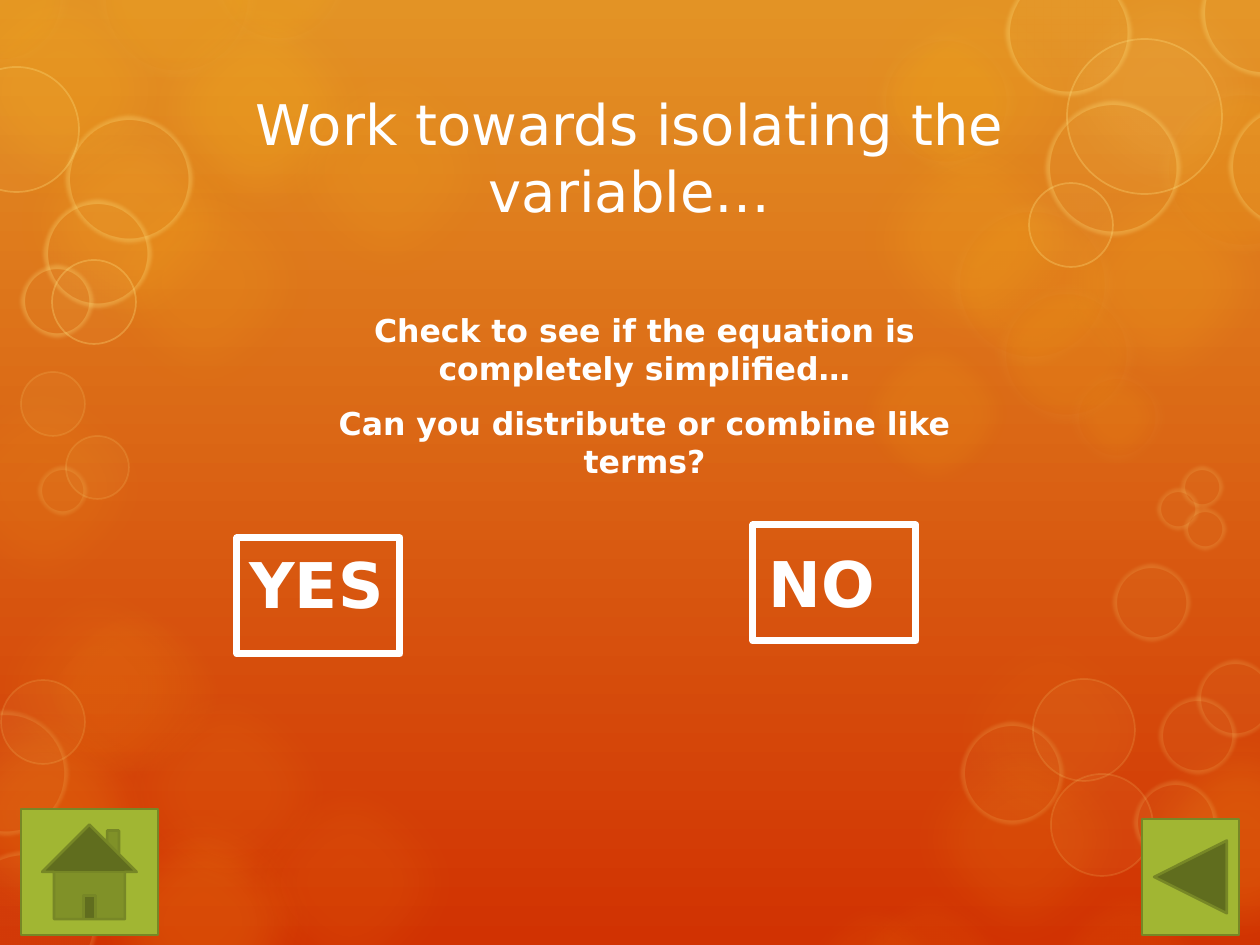
from lxml.etree import SubElement
from pptx import Presentation
from pptx.dml.color import RGBColor
from pptx.enum.shapes import MSO_SHAPE
from pptx.enum.text import MSO_ANCHOR, MSO_AUTO_SIZE, PP_ALIGN
from pptx.oxml.ns import qn
from pptx.util import Pt

PX = 7257  # EMU per px, 126 px to the inch
WIDTH, HEIGHT = 1260, 945
FONT = "DejaVu Sans"
COLORS = {
    "top": "E39325", "bottom": "D13202", "amber": "FDC61B", "pale": "FFE281",
    "cream": "FEEBAE", "white": "FFFFFF", "green": "A1B633", "olive": "778726",
}

# (left, top, fill opacity in percent), all of one diameter
BLOB_SIZE = 263
BLOBS = [
    (-32, 557, 8), (72, 151, 10), (258, 39, 10), (72, 790, 16), (-70, -41, 14),
    (127, -23, 20), (0, 91, 15), (842, -37, 10), (1033, 151, 15),
    (1109, 709, 16), (919, 601, 5), (-86, 682, 16), (97, 660, 8),
    (843, 108, 15), (890, 708, 10), (219, 752, 8), (-88, 356, 8),
]
# Circles are (left, top, diameter)
GLOWS = [
    (1157, 83, 173), (874, 29, 144), (948, 200, 168), (994, 282, 144),
    (1067, 367, 100), (94, -83, 165), (207, -94, 144), (-72, -73, 144),
]
FAINT_GLOWS = [(38, 596, 193), (795, 895, 159), (843, 883, 174), (1043, 883, 169)]
# (line width, line opacity, soft edge, circles)
RINGS = [
    (5, 15, 2.5, [
        (-45, 851, 142), (-56, 711, 124), (961, 722, 102), (1134, 781, 83),
        (1113, 564, 77), (1159, 697, 77), (1197, 660, 77), (1181, 466, 42),
        (1157, 488, 42), (1184, 508, 42), (38, 466, 49)]),
    (5, 30, 2.5, [
        (66, 116, 126), (44, 200, 107), (21, 265, 72), (1006, -30, 125),
        (1201, -50, 126), (1229, 104, 125), (1046, 101, 134)]),
    (1, 15, 0, [
        (1, 680, 84), (1051, 774, 102), (1033, 679, 102), (21, 372, 64),
        (66, 436, 63)]),
    (1, 30, 0, [(-46, 67, 125), (52, 260, 84), (1067, 39, 155), (1029, 183, 84)]),
]


def px(*lengths):
    return [round(n * PX) for n in lengths]


def rgb(name):
    return RGBColor.from_string(COLORS[name])


def style(sp, fill=None, line=None, width=0):
    sp.shadow.inherit = False
    if fill:
        sp.fill.solid()
        sp.fill.fore_color.rgb = rgb(fill)
    else:
        sp.fill.background()
    if line:
        sp.line.color.rgb = rgb(line)
        sp.line.width = Pt(width)
    else:
        sp.line.fill.background()


def bubble(shapes, box, fill, alpha, soft=0, line=None, width=0, line_alpha=0):
    x, y, d = box
    sp = shapes.add_shape(MSO_SHAPE.OVAL, *px(x, y, d, d))
    style(sp, fill, line, width)
    sp_pr = sp._element.spPr
    for color, percent in zip(list(sp_pr.iter(qn("a:srgbClr"))), (alpha, line_alpha)):
        SubElement(color, qn("a:alpha")).set("val", str(percent * 1000))
    if soft:
        effects = sp_pr.find(qn("a:effectLst"))
        SubElement(effects, qn("a:softEdge")).set("rad", str(Pt(soft)))
    return sp


def add_bubbles(shapes):
    bubbles = [bubble(shapes, (x, y, BLOB_SIZE), "amber", alpha, 25)
               for x, y, alpha in BLOBS]
    bubbles.append(bubble(shapes, (1033, -41, BLOB_SIZE), "pale", 10, 25))
    bubbles.append(bubble(shapes, (850, 330, 168), "amber", 10, 12))
    for box in GLOWS:
        bubbles.append(bubble(shapes, box, "amber", 10, 12, "cream", 14, 6))
    for box in FAINT_GLOWS:
        bubbles.append(bubble(shapes, box, "amber", 6, 12, "cream", 4, 4))
    for width, line_alpha, soft, boxes in RINGS:
        for box in boxes:
            bubbles.append(bubble(shapes, box, "pale", 5, soft, "pale", width, line_alpha))
    return bubbles


def move_to_master(shapes, master):
    """Make the shapes part of the template, since a master has no add_shape."""
    tree = master.shapes._spTree
    for number, sp in enumerate(shapes, 100):
        sp._element.nvSpPr.cNvPr.set("id", str(number))
        tree.append(sp._element)


def fill_placeholder(sp, box, lines, size, bold):
    sp.left, sp.top, sp.width, sp.height = px(*box)
    tf = sp.text_frame
    tf.auto_size = MSO_AUTO_SIZE.NONE
    tf.vertical_anchor = MSO_ANCHOR.MIDDLE
    for i, line in enumerate(lines):
        p = tf.add_paragraph() if i else tf.paragraphs[0]
        p.alignment = PP_ALIGN.CENTER
        add_run(p, line, size, bold)
    return tf


def add_run(p, text, size, bold):
    r = p.add_run()
    r.text = text
    r.font.name = FONT
    r.font.size = Pt(size)
    r.font.bold = bold
    r.font.color.rgb = rgb("white")


def remove_bullets(tf):
    for p in tf.paragraphs:
        p.space_after = Pt(6)
        p_pr = p._p.get_or_add_pPr()
        p_pr.set("marL", "0")
        p_pr.set("indent", "0")
        SubElement(p_pr, qn("a:buNone"))


def add_button(shapes, kind, box, **look):
    style(shapes.add_shape(kind, *px(*box)), **look)


def add_answer(shapes, text, text_at, button_at):
    tf = shapes.add_textbox(*px(*text_at, 179, 89)).text_frame
    tf.word_wrap = True
    add_run(tf.paragraphs[0], text, 36, True)
    add_button(shapes, MSO_SHAPE.ACTION_BUTTON_CUSTOM, (*button_at, 163, 116),
               line="white", width=4)


def main():
    prs = Presentation()
    prs.slide_width, prs.slide_height = px(WIDTH, HEIGHT)
    s = prs.slides.add_slide(prs.slide_layouts[1])
    fill = s.background.fill
    fill.gradient()
    fill.gradient_angle = 270
    for stop, name in zip(fill.gradient_stops, ("top", "bottom")):
        stop.color.rgb = rgb(name)

    shapes = s.shapes
    move_to_master(add_bubbles(shapes), prs.slide_master)
    fill_placeholder(shapes.title, (139, 93, 982, 127),
                     ["Work towards isolating the variable…"], 32, False)
    remove_bullets(fill_placeholder(
        s.placeholders[1], (294, 284, 701, 223),
        ["Check to see if the equation is completely simplified…",
         "Can you distribute or combine like terms?"], 18, True))
    add_answer(shapes, "YES", (237, 539), (237, 538))
    add_answer(shapes, "NO", (756, 538), (753, 525))
    green = {"fill": "green", "line": "olive", "width": 1.5}
    add_button(shapes, MSO_SHAPE.ACTION_BUTTON_BACK_OR_PREVIOUS,
               (1142, 819, 97, 116), **green)
    add_button(shapes, MSO_SHAPE.ACTION_BUTTON_HOME, (21, 809, 137, 126), **green)
    prs.save("out.pptx")


if __name__ == "__main__":
    main()
